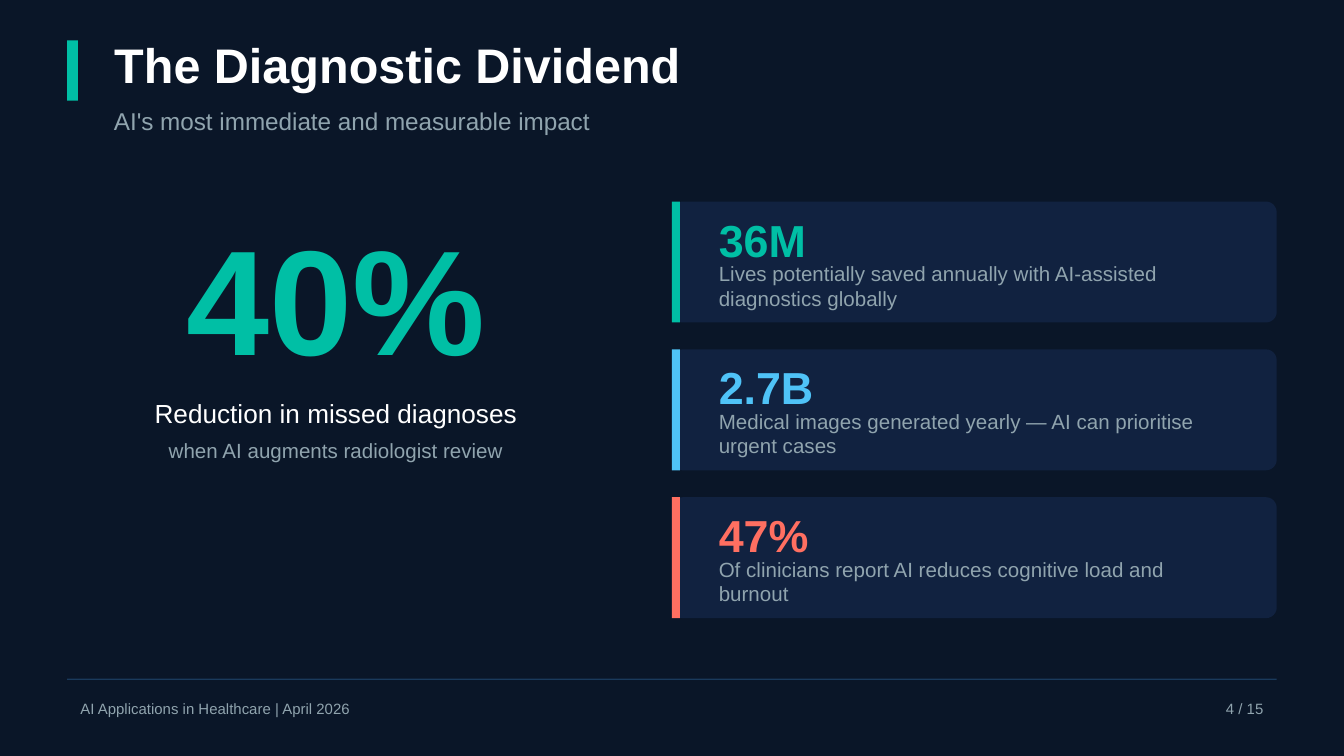
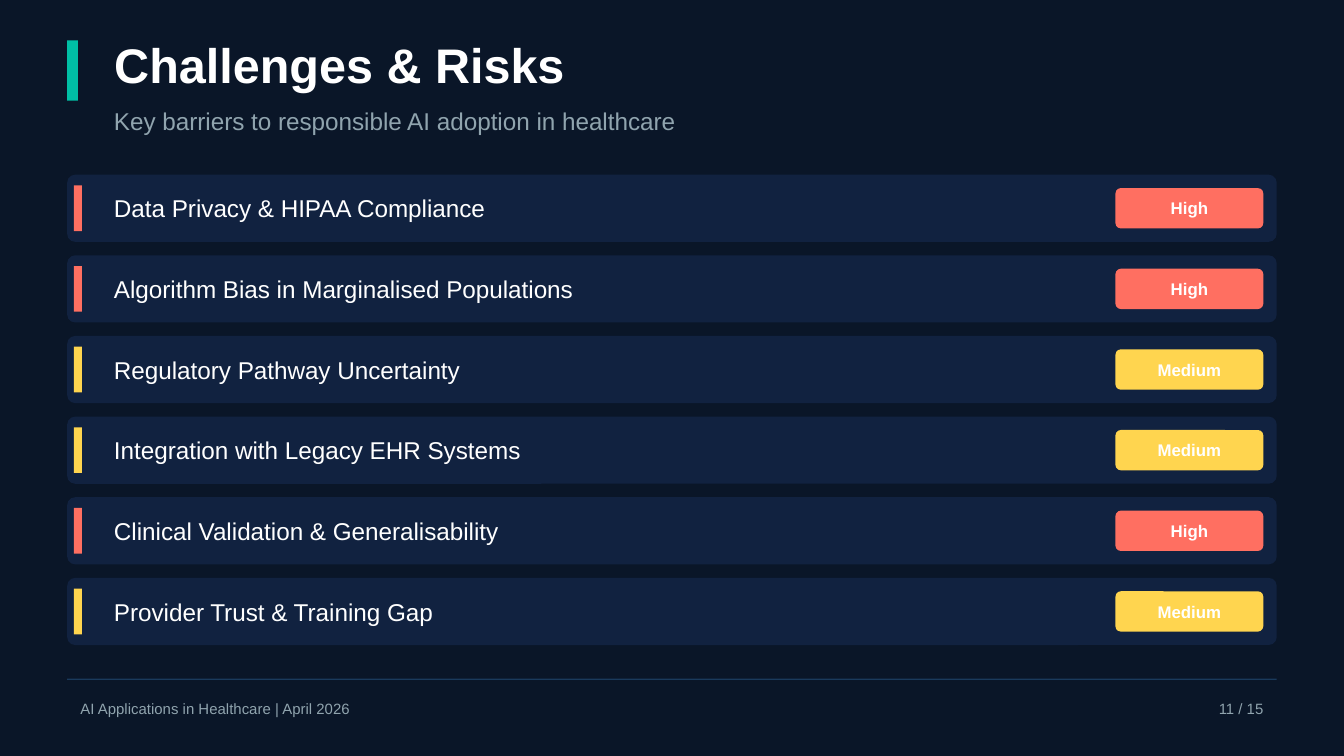
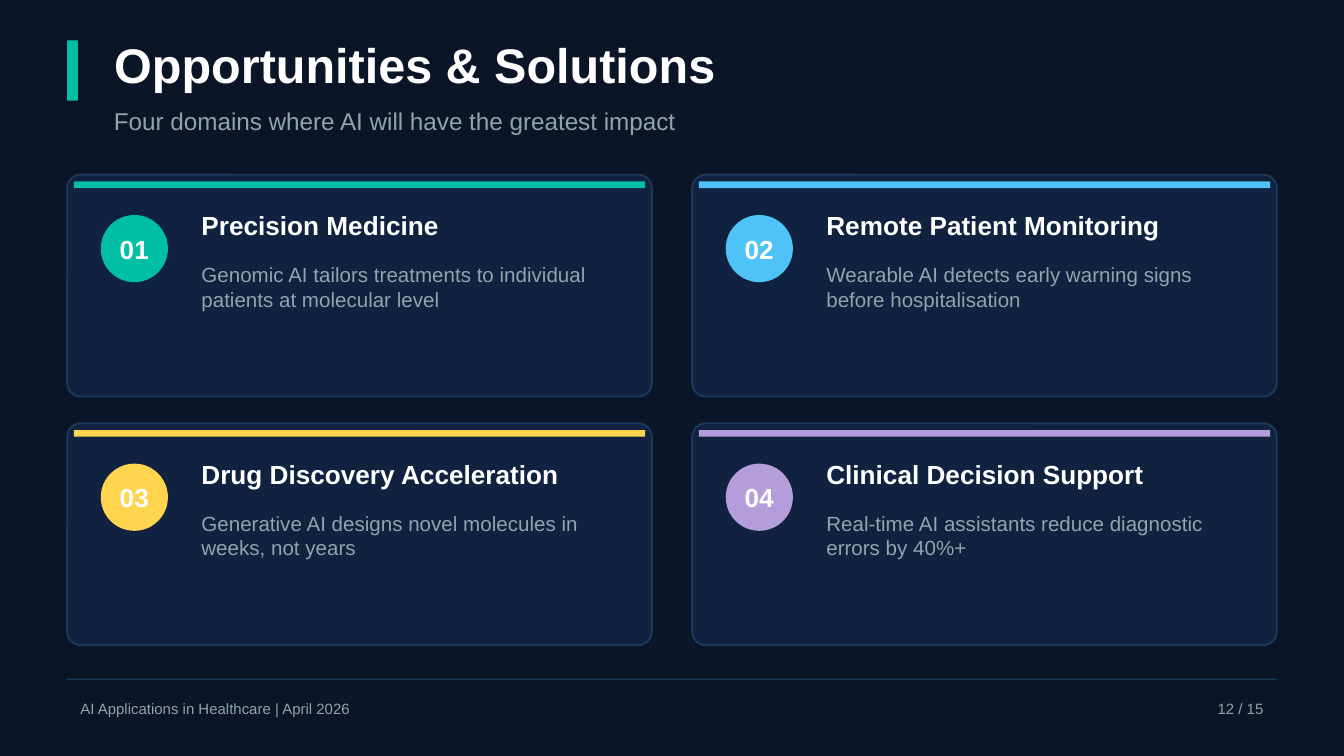
"""Build three dark slides on AI in healthcare: impact figures, risks and opportunities."""
from dataclasses import dataclass
from typing import NamedTuple, Optional

from pptx import Presentation
from pptx.dml.color import RGBColor
from pptx.enum import shapes, text
from pptx.util import Pt

NAVY = RGBColor(0x0A, 0x16, 0x28)
PANEL = RGBColor(0x11, 0x22, 0x40)
EDGE = RGBColor(0x1A, 0x3A, 0x5C)
WHITE = RGBColor(0xFF, 0xFF, 0xFF)
GREY = RGBColor(0x90, 0xA4, 0xAE)
TEAL = RGBColor(0x00, 0xBF, 0xA5)
BLUE = RGBColor(0x4F, 0xC3, 0xF7)
CORAL = RGBColor(0xFF, 0x6F, 0x61)
YELLOW = RGBColor(0xFF, 0xD5, 0x4F)
LILAC = RGBColor(0xB3, 0x9D, 0xDB)

FONT = "Arial"
FOOTER = "AI Applications in Healthcare | April 2026"
TOTAL = 15
LEFT, WIDTH = 36, 648

RECT = shapes.MSO_SHAPE.RECTANGLE
ROUNDED = shapes.MSO_SHAPE.ROUNDED_RECTANGLE
OVAL = shapes.MSO_SHAPE.OVAL
START, CENTER, END = text.PP_ALIGN.LEFT, text.PP_ALIGN.CENTER, text.PP_ALIGN.RIGHT
MIDDLE, TOP = text.MSO_ANCHOR.MIDDLE, text.MSO_ANCHOR.TOP


class Box(NamedTuple):
    left: float
    top: float
    width: float
    height: float

    def lengths(self) -> list:
        return [Pt(value) for value in self]


@dataclass(frozen=True)
class Style:
    size: float
    color: RGBColor = WHITE
    bold: bool = False
    align: text.PP_ALIGN = START
    anchor: text.MSO_ANCHOR = MIDDLE


class Stat(NamedTuple):
    figure: str
    meaning: str
    accent: RGBColor


class Level(NamedTuple):
    label: str
    accent: RGBColor


class Risk(NamedTuple):
    name: str
    level: Level


class Domain(NamedTuple):
    name: str
    promise: str
    accent: RGBColor


TITLE = Style(26, bold=True)
SUBTITLE = Style(13, GREY)
NOTE = Style(11, GREY)
HIGH, MEDIUM = Level("High", CORAL), Level("Medium", YELLOW)

STATS = [
    Stat("36M", "Lives potentially saved annually with AI-assisted diagnostics globally", TEAL),
    Stat("2.7B", "Medical images generated yearly — AI can prioritise urgent cases", BLUE),
    Stat("47%", "Of clinicians report AI reduces cognitive load and burnout", CORAL),
]
RISKS = [
    Risk("Data Privacy & HIPAA Compliance", HIGH),
    Risk("Algorithm Bias in Marginalised Populations", HIGH),
    Risk("Regulatory Pathway Uncertainty", MEDIUM),
    Risk("Integration with Legacy EHR Systems", MEDIUM),
    Risk("Clinical Validation & Generalisability", HIGH),
    Risk("Provider Trust & Training Gap", MEDIUM),
]
DOMAINS = [
    Domain("Precision Medicine",
           "Genomic AI tailors treatments to individual patients at molecular level", TEAL),
    Domain("Remote Patient Monitoring",
           "Wearable AI detects early warning signs before hospitalisation", BLUE),
    Domain("Drug Discovery Acceleration",
           "Generative AI designs novel molecules in weeks, not years", YELLOW),
    Domain("Clinical Decision Support",
           "Real-time AI assistants reduce diagnostic errors by 40%+", LILAC),
]


def set_text(holder, words: str, style: Style) -> None:
    frame = holder.text_frame
    frame.text = words
    frame.word_wrap = True
    frame.auto_size = text.MSO_AUTO_SIZE.NONE
    frame.vertical_anchor = style.anchor
    paragraph = frame.paragraphs[0]
    paragraph.alignment = style.align
    font = paragraph.font
    font.name, font.size, font.bold = FONT, Pt(style.size), style.bold
    font.color.rgb = style.color


def add_text(slide, box: Box, words: str, style: Style) -> None:
    set_text(slide.shapes.add_textbox(*box.lengths()), words, style)


def add_block(slide, box: Box, fill: RGBColor, kind=RECT, radius: float = 0,
              edge: Optional[RGBColor] = None):
    block = slide.shapes.add_shape(kind, *box.lengths())
    block.shadow.inherit = False
    block.fill.solid()
    block.fill.fore_color.rgb = fill
    if edge is None:
        block.line.fill.background()
    else:
        block.line.color.rgb = edge
        block.line.width = Pt(1)
    if radius:
        block.adjustments[0] = radius / min(box.width, box.height)
    return block


def add_label(block, words: str, size: float) -> None:
    set_text(block, words, Style(size, bold=True, align=CENTER))
    frame = block.text_frame
    frame.margin_left = frame.margin_right = frame.margin_top = frame.margin_bottom = 0


def add_page(deck, title: str, subtitle: str, number: int):
    slide = deck.slides.add_slide(deck.slide_layouts[5])
    slide.background.fill.solid()
    slide.background.fill.fore_color.rgb = NAVY
    heading = slide.shapes.title
    heading.left, heading.top, heading.width, heading.height = Box(54, 14.4, 576, 39.6).lengths()
    set_text(heading, title, TITLE)
    add_block(slide, Box(LEFT, 21.6, 5.76, 32.4), TEAL)
    add_text(slide, Box(54, 54, 576, 21.6), subtitle, SUBTITLE)
    add_text(slide, Box(LEFT, 367.2, 432, 25.2), FOOTER, Style(8, GREY))
    add_text(slide, Box(612, 367.2, 72, 25.2), f"{number} / {TOTAL}", Style(8, GREY, align=END))
    add_block(slide, Box(LEFT, 363.6, WIDTH, 0.72), EDGE)
    return slide


def add_stat(slide, top: float, stat: Stat) -> None:
    add_block(slide, Box(360, top, 324, 64.8), PANEL, ROUNDED, 5.76)
    add_block(slide, Box(360, top, 4.32, 64.8), stat.accent)
    add_text(slide, Box(378, top + 5.76, 144, 28.8), stat.figure, Style(24, stat.accent, True))
    add_text(slide, Box(378, top + 32.4, 288, 25.2), stat.meaning, NOTE)


def add_risk(slide, top: float, risk: Risk) -> None:
    add_block(slide, Box(LEFT, top, WIDTH, 36), PANEL, ROUNDED, 4.32)
    add_block(slide, Box(39.6, top + 5.76, 4.32, 24.48), risk.level.accent)
    add_text(slide, Box(54, top, 468, 36), risk.name, Style(13))
    badge = add_block(slide, Box(597.6, top + 7.2, 79.2, 21.6), risk.level.accent, ROUNDED, 2.88)
    add_label(badge, risk.level.label, 9)


def add_domain(slide, left: float, top: float, number: int, domain: Domain) -> None:
    add_block(slide, Box(left, top, 313.2, 118.8), PANEL, ROUNDED, 7.2, EDGE)
    add_block(slide, Box(left + 3.6, top + 3.6, 306, 3.6), domain.accent)
    disc = add_block(slide, Box(left + 18, top + 21.6, 36, 36), domain.accent, OVAL)
    add_label(disc, f"{number:02d}", 14)
    add_text(slide, Box(left + 64.8, top + 14.4, 226.8, 25.2), domain.name, Style(14, bold=True))
    add_text(slide, Box(left + 64.8, top + 43.2, 226.8, 61.2), domain.promise,
             Style(11, GREY, anchor=TOP))


def build_dividend(deck) -> None:
    slide = add_page(deck, "The Diagnostic Dividend",
                     "AI's most immediate and measurable impact", 4)
    add_text(slide, Box(LEFT, 108, 288, 100.8), "40%", Style(80, TEAL, True, CENTER))
    add_text(slide, Box(LEFT, 208.8, 288, 25.2), "Reduction in missed diagnoses",
             Style(14, align=CENTER))
    add_text(slide, Box(LEFT, 230.4, 288, 21.6), "when AI augments radiologist review",
             Style(11, GREY, align=CENTER))
    for row, stat in enumerate(STATS):
        add_stat(slide, 108 + row * 79.2, stat)


def build_risks(deck) -> None:
    slide = add_page(deck, "Challenges & Risks",
                     "Key barriers to responsible AI adoption in healthcare", 11)
    for row, risk in enumerate(RISKS):
        add_risk(slide, 93.6 + row * 43.2, risk)


def build_opportunities(deck) -> None:
    slide = add_page(deck, "Opportunities & Solutions",
                     "Four domains where AI will have the greatest impact", 12)
    for index, domain in enumerate(DOMAINS):
        row, column = divmod(index, 2)
        add_domain(slide, LEFT + column * 334.8, 93.6 + row * 133.2, index + 1, domain)


def main() -> None:
    deck = Presentation()
    deck.slide_width, deck.slide_height = Pt(720), Pt(405)
    build_dividend(deck)
    build_risks(deck)
    build_opportunities(deck)
    deck.save("out.pptx")


if __name__ == "__main__":
    main()
